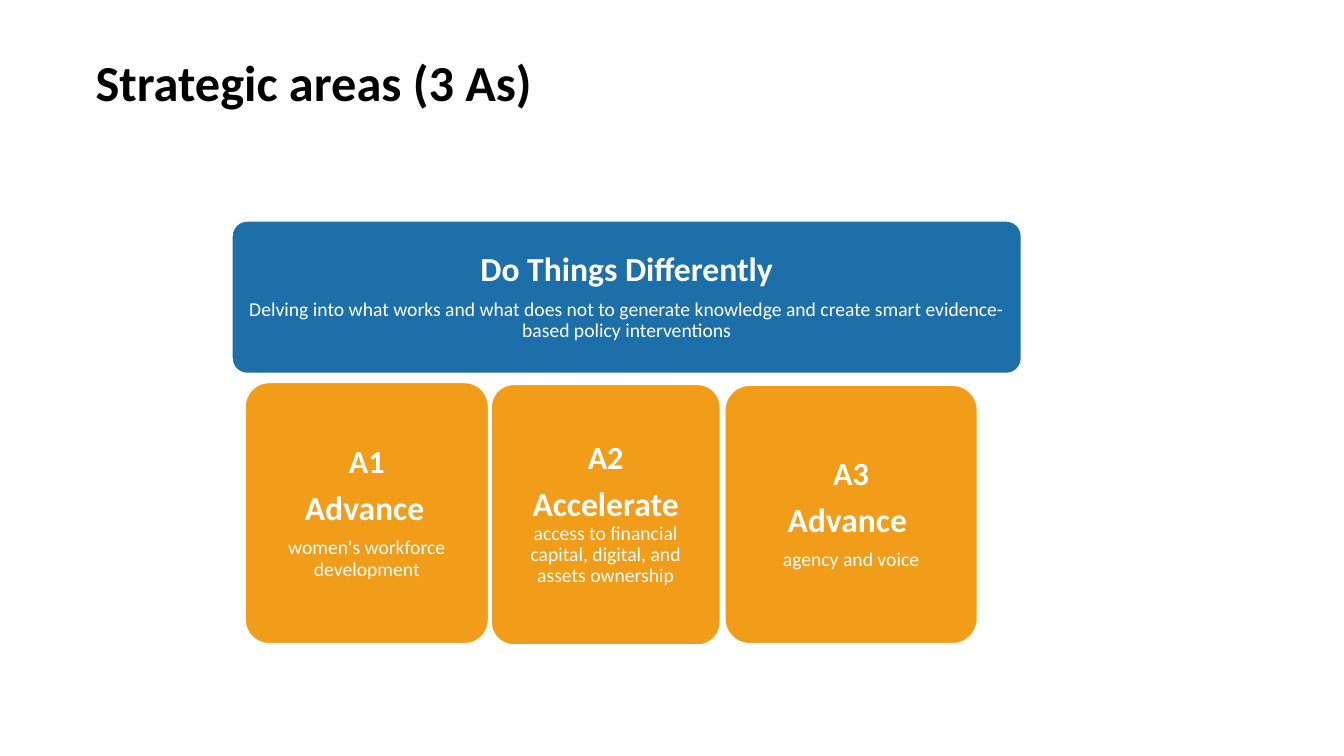
from pptx import Presentation
from pptx.dml.color import RGBColor
from pptx.enum.shapes import MSO_SHAPE as Shape
from pptx.enum.text import MSO_ANCHOR as Anchor, PP_ALIGN as Align
from pptx.util import Cm, Pt

BLACK = RGBColor(0x00, 0x00, 0x00)
WHITE = RGBColor(0xFF, 0xFF, 0xFF)
BLUE = RGBColor(0x1D, 0x6F, 0xA9)
ORANGE = RGBColor(0xF1, 0x9D, 0x19)


class StrategySlide:
    """Hold the slide and the style shared by its title and cards."""

    font = "Calibri"
    line_spacing = 0.9
    space_after = Pt(7.5)

    def __init__(self, presentation):
        self.slide = presentation.slides.add_slide(presentation.slide_layouts[6])

    def add_text(self, frame, paragraphs, color, align, inset):
        frame.word_wrap = True
        frame.margin_left = frame.margin_right = Cm(inset)
        frame.margin_top = frame.margin_bottom = Cm(inset)
        for index, runs in enumerate(paragraphs):
            paragraph = frame.add_paragraph() if index else frame.paragraphs[0]
            paragraph.alignment = align
            paragraph.line_spacing = self.line_spacing
            paragraph.space_after = self.space_after
            for text, size, bold in runs:
                run = paragraph.add_run()
                run.text = text
                run.font.name = self.font
                run.font.size = Pt(size)
                run.font.bold = bold
                run.font.color.rgb = color

    def add_title(self, text, left, top, width, height):
        box = self.slide.shapes.add_textbox(Cm(left), Cm(top), Cm(width), Cm(height))
        self.add_text(box.text_frame, [[(text, 36, True)]], BLACK, Align.LEFT, 0.33)

    def add_card(self, bounds, fill, paragraphs, inset=0.25):
        shape = self.slide.shapes.add_shape(
            Shape.ROUNDED_RECTANGLE, *(Cm(length) for length in bounds))
        shape.adjustments[0] = 0.1
        shape.shadow.inherit = False
        shape.fill.solid()
        shape.fill.fore_color.rgb = fill
        shape.line.color.rgb = WHITE
        shape.line.width = Pt(1.5)
        shape.text_frame.vertical_anchor = Anchor.MIDDLE
        self.add_text(shape.text_frame, paragraphs, WHITE, Align.CENTER, inset)


def main():
    presentation = Presentation()
    presentation.slide_width = Cm(33.87)
    presentation.slide_height = Cm(19.05)
    slide = StrategySlide(presentation)

    slide.add_title("Strategic areas (3 As)", 2.08, 1.12, 29.2, 3.35)
    slide.add_card((5.84, 5.56, 19.91, 3.86), BLUE, [
        [("Do Things Differently", 24, True)],
        [("Delving into what works and what does not to generate knowledge "
          "and create smart evidence-based policy interventions", 14, False)],
    ])
    slide.add_card((6.17, 9.63, 6.15, 6.6), ORANGE, [
        [("A1", 23, True)],
        [("Advance", 24, True), (" ", 14, False)],
        [("women's workforce development", 14, False)],
    ])
    slide.add_card((12.37, 9.68, 5.79, 6.58), ORANGE, [
        [("A2", 23, True)],
        [("Accelerate", 24, True), (" ", 20, False),
         ("access to financial capital, digital, and assets ownership", 14, False)],
    ])
    slide.add_card((18.26, 9.7, 6.38, 6.53), ORANGE, [
        [("A3", 23, True)],
        [("Advance ", 24, True)],
        [("agency and voice", 14, False)],
    ], inset=0.15)

    presentation.save("out.pptx")


if __name__ == "__main__":
    main()
